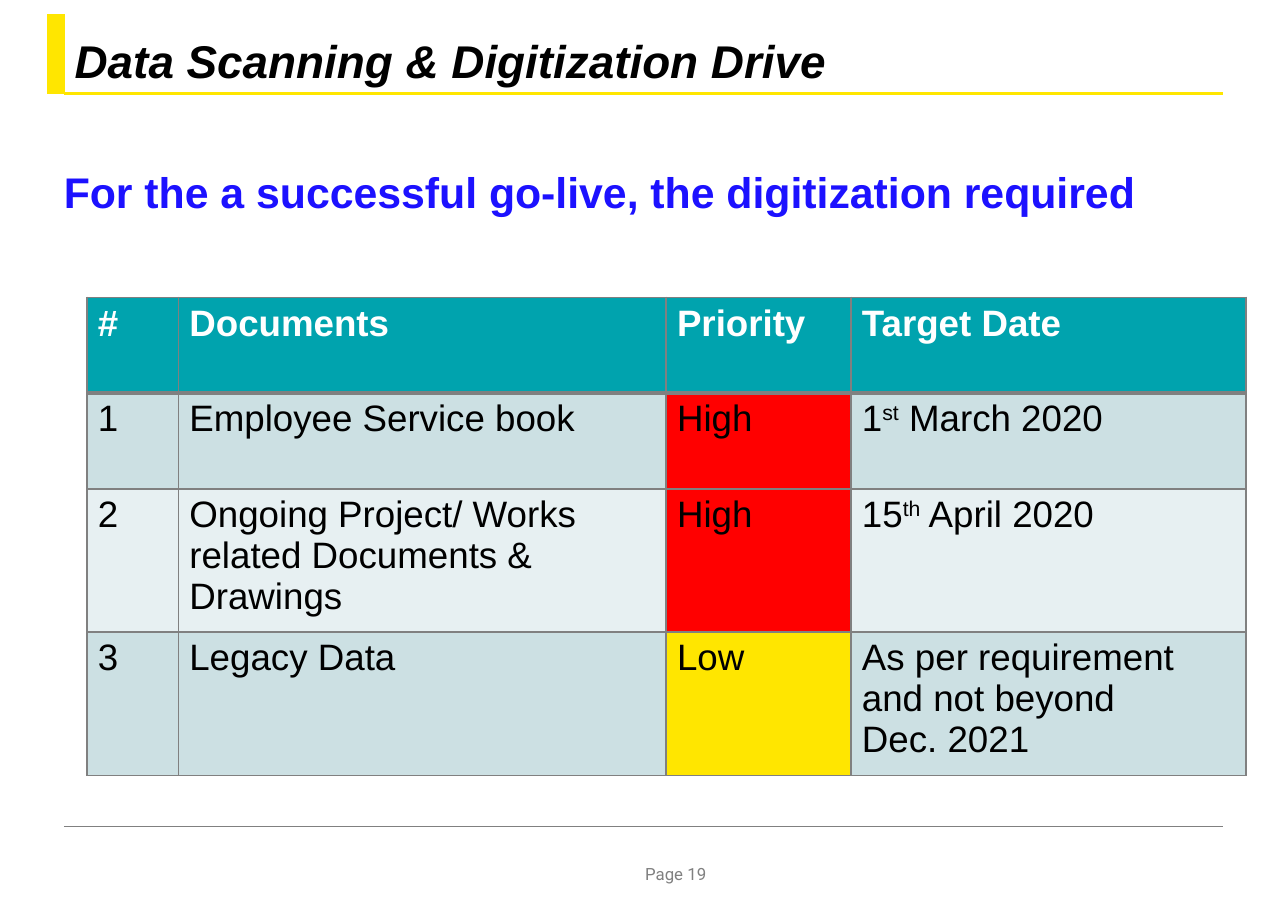
"""Build the slide on the data scanning and digitization drive."""
from lxml.etree import SubElement
from pptx import Presentation
from pptx.dml.color import RGBColor
from pptx.enum.shapes import MSO_CONNECTOR
from pptx.oxml.ns import qn
from pptx.util import Emu, Pt

SLIDE = (1170, 830)
YELLOW, GREY, RED, TEAL = "FFE600", "808080", "FF0000", "00A3AE"
BANDS = ("CCE0E3", "E7F0F2")

RULES = [
    ((58, 85), (1111, 85), YELLOW, 1.5),
    ((58, 750), (1111, 750), GREY, 0.25),
    ((51, 85), (51, 13), YELLOW, 12),
]
TEXTS = [
    {"text": "Page 19", "box": (586, 784, 79, 22), "insets": (0, 0, 0, 0),
     "font": {"name": "Roboto", "size": Pt(11)}, "color": GREY, "spacing": {}},
    {"text": "Data Scanning & Digitization Drive", "box": (58, 27, 1053, 58),
     "insets": (10, 10, 10, 10),
     "font": {"name": "Arial", "size": Pt(30), "bold": True, "italic": True},
     "color": "000000", "spacing": {"line_spacing": 0.85, "space_after": Pt(6)}},
    {"text": "For the a successful go-live, the digitization required",
     "box": (58, 116, 1054, 520), "insets": (0, 11, 10, 5),
     "font": {"name": "Arial", "size": Pt(28), "bold": True},
     "color": "1C11FF", "spacing": {"line_spacing": 1.5}},
]
TABLE_AT = (79, 270)
COLUMNS = (83, 443, 168, 359)
ROW_HEIGHT = 87
HEADER = ("#", "Documents", "Priority", "Target Date")
DOCUMENTS = [
    ("1", "Employee Service book", "High", [("1", "st", " March 2020")]),
    ("2", "Ongoing Project/ Works related Documents & Drawings", "High",
     [("15", "th", " April 2020")]),
    ("3", "Legacy Data", "Low",
     [("As per requirement and not beyond",), ("Dec. 2021",)]),
]
PRIORITY_FILLS = {"High": RED, "Low": YELLOW}


def px(length):
    return Emu(length * 9144)


def rgb(code):
    return RGBColor.from_string(code)


def apply(target, formats):
    for name, value in formats.items():
        setattr(target, name, value)


def add_rule(slide, start, end, color, width):
    rule = slide.shapes.add_connector(MSO_CONNECTOR.STRAIGHT, *map(px, start + end))
    rule.line.color.rgb = rgb(color)
    rule.line.width = Pt(width)
    SubElement(rule._element.spPr, qn("a:effectLst"))


def add_text(slide, text, box, insets, font, color, spacing):
    frame = slide.shapes.add_textbox(*map(px, box)).text_frame
    frame.word_wrap = True
    sides = ("margin_left", "margin_top", "margin_right", "margin_bottom")
    apply(frame, dict(zip(sides, map(px, insets))))
    paragraph = frame.paragraphs[0]
    apply(paragraph, spacing)
    run = paragraph.add_run()
    run.text = text
    apply(run.font, font)
    run.font.color.rgb = rgb(color)


def fill_cell(cell, content, fill, color, bold, bottom_width):
    lines = [(content,)] if isinstance(content, str) else content
    for index, pieces in enumerate(lines):
        frame = cell.text_frame
        paragraph = frame.add_paragraph() if index else frame.paragraphs[0]
        for position, piece in enumerate(pieces):
            run = paragraph.add_run()
            run.text = piece
            apply(run.font, {"name": "Arial", "size": Pt(24), "bold": bold})
            run.font.color.rgb = rgb(color)
            if position == 1:
                run.font._element.set("baseline", "30000")
    properties = cell._tc.get_or_add_tcPr()
    for side, width in (("L", 1), ("R", 1), ("T", 1), ("B", bottom_width)):
        border = SubElement(properties, qn(f"a:ln{side}"), w=str(Pt(width)))
        solid = SubElement(border, qn("a:solidFill"))
        SubElement(solid, qn("a:srgbClr"), val=GREY)
    cell.fill.solid()
    cell.fill.fore_color.rgb = rgb(fill)


def add_documents(slide):
    rows = [HEADER, *DOCUMENTS]
    size = (sum(COLUMNS), ROW_HEIGHT * len(rows))
    table = slide.shapes.add_table(
        len(rows), len(COLUMNS), *map(px, TABLE_AT + size)).table
    for column, width in zip(table.columns, COLUMNS):
        column.width = px(width)
    for r, row in enumerate(rows):
        for c, content in enumerate(row):
            if r == 0:
                style = (TEAL, "FFFFFF", True, 3)
            else:
                band = BANDS[(r - 1) % 2]
                fill = PRIORITY_FILLS[content] if c == 2 else band
                style = (fill, "000000", False, 1)
            fill_cell(table.cell(r, c), content, *style)


def main():
    deck = Presentation()
    deck.slide_width, deck.slide_height = map(px, SLIDE)
    slide = deck.slides.add_slide(deck.slide_layouts[6])
    for rule in RULES:
        add_rule(slide, *rule)
    for text in TEXTS:
        add_text(slide, **text)
    add_documents(slide)
    deck.save("out.pptx")


if __name__ == "__main__":
    main()
